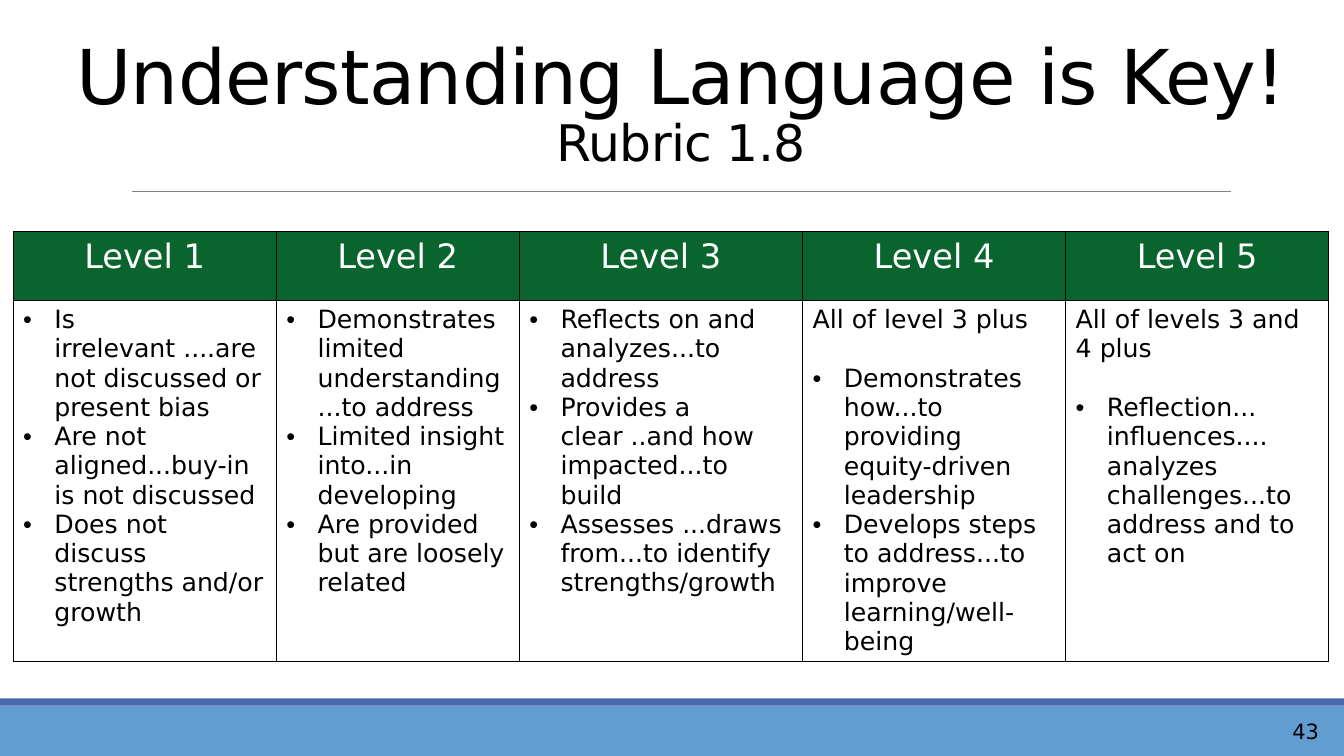
"""Build the Rubric 1.8 slide with a five-level table."""
from lxml.etree import SubElement
from pptx import Presentation
from pptx.dml.color import RGBColor
from pptx.enum.shapes import MSO_CONNECTOR, MSO_SHAPE
from pptx.enum.text import MSO_ANCHOR, MSO_AUTO_SIZE, PP_ALIGN
from pptx.oxml.ns import qn
from pptx.util import Inches, Pt

COLORS = {
    "black": "000000",
    "white": "FFFFFF",
    "green": "09652D",
    "light_blue": "629DD1",
    "dark_blue": "4A66AC",
    "gray": "808080",
}
FONT = "DejaVu Sans"
LEVELS = [
    ("Level 1", 2.61, "", [
        "Is irrelevant ....are not discussed or present bias",
        "Are not aligned...buy-in is not discussed",
        "Does not discuss strengths and/or growth",
    ]),
    ("Level 2", 2.41, "", [
        "Demonstrates limited understanding ...to address",
        "Limited insight into...in developing",
        "Are provided but are loosely related",
    ]),
    ("Level 3", 2.81, "", [
        "Reflects on and analyzes...to address",
        "Provides a clear ..and how impacted...to build",
        "Assesses ...draws from...to identify strengths/growth",
    ]),
    ("Level 4", 2.61, "All of level 3 plus", [
        "Demonstrates how...to providing equity-driven leadership",
        "Develops steps to address...to improve learning/well-being",
    ]),
    ("Level 5", 2.61, "All of levels 3 and 4 plus", [
        "Reflection... influences.... analyzes challenges...to address and to act on",
    ]),
]


def format_runs(paragraph, size, color):
    for run in paragraph.runs:
        run.font.name = FONT
        run.font.size = Pt(size)
        run.font.color.rgb = RGBColor.from_string(COLORS[color])


def add_borders(cell):
    properties = cell._tc.get_or_add_tcPr()
    for side in ("a:lnL", "a:lnR", "a:lnT", "a:lnB"):
        border = SubElement(properties, qn(side), w=str(Pt(1)))
        fill = SubElement(border, qn("a:solidFill"))
        SubElement(fill, qn("a:srgbClr"), val=COLORS["black"])


presentation = Presentation()
presentation.slide_width = Inches(13.33)
presentation.slide_height = Inches(7.5)
slide = presentation.slides.add_slide(presentation.slide_layouts[5])

for top, height, color in ((7, 0.5, "light_blue"), (6.93, 0.07, "dark_blue")):
    band = slide.shapes.add_shape(
        MSO_SHAPE.RECTANGLE, 0, Inches(top), Inches(13.33), Inches(height))
    band.shadow.inherit = False
    band.fill.solid()
    band.fill.fore_color.rgb = RGBColor.from_string(COLORS[color])
    band.line.fill.background()

divider = slide.shapes.add_connector(
    MSO_CONNECTOR.STRAIGHT, Inches(1.31), Inches(1.9), Inches(12.21), Inches(1.9))
divider.line.color.rgb = RGBColor.from_string(COLORS["gray"])
divider.line.width = Pt(0.5)
SubElement(divider._element.spPr, qn("a:effectLst"))

title = slide.shapes.title
title.left, title.top = Inches(0.34), Inches(0.31)
title.width, title.height = Inches(12.83), Inches(1.44)
title_frame = title.text_frame
title_frame.text = "Understanding Language is Key!\vRubric 1.8"
title_frame.auto_size = MSO_AUTO_SIZE.NONE
title_frame.vertical_anchor = MSO_ANCHOR.BOTTOM
heading = title_frame.paragraphs[0]
heading.alignment = PP_ALIGN.CENTER
heading.line_spacing = 0.85
format_runs(heading, 54, "black")
heading.runs[1].font.size = Pt(36)
for run in heading.runs:
    run._r.get_or_add_rPr().set("spc", "-50")

table = slide.shapes.add_table(
    2, len(LEVELS), Inches(0.13), Inches(2.3), Inches(13.05), Inches(4.26)).table
table.rows[0].height = Inches(0.68)
table.rows[1].height = Inches(3.58)

for column, (level, width, introduction, points) in enumerate(LEVELS):
    table.columns[column].width = Inches(width)
    header, body = table.cell(0, column), table.cell(1, column)
    add_borders(header)
    add_borders(body)
    header.fill.solid()
    header.fill.fore_color.rgb = RGBColor.from_string(COLORS["green"])
    body.fill.background()

    header.text_frame.text = level
    header_paragraph = header.text_frame.paragraphs[0]
    header_paragraph.alignment = PP_ALIGN.CENTER
    format_runs(header_paragraph, 24, "white")
    header_paragraph.runs[0].font.bold = False

    lines = [introduction] + points if introduction else points
    body.text_frame.text = "\n".join(lines)
    for paragraph in body.text_frame.paragraphs:
        format_runs(paragraph, 18, "black")
        if paragraph.text == introduction:
            paragraph.space_after = Pt(21)
        else:
            properties = paragraph._p.get_or_add_pPr()
            properties.set("marL", str(Inches(0.31)))
            properties.set("indent", str(-Inches(0.31)))
            SubElement(properties, qn("a:buFont"), typeface="Arial")
            SubElement(properties, qn("a:buChar"), char="•")

number_box = slide.shapes.add_textbox(
    Inches(12.46), Inches(7.03), Inches(0.72), Inches(0.44))
number_frame = number_box.text_frame
number_frame.word_wrap = True
number_frame.vertical_anchor = MSO_ANCHOR.MIDDLE
number_frame.text = "43"
number_frame.paragraphs[0].alignment = PP_ALIGN.RIGHT
format_runs(number_frame.paragraphs[0], 15, "black")

presentation.save("out.pptx")
